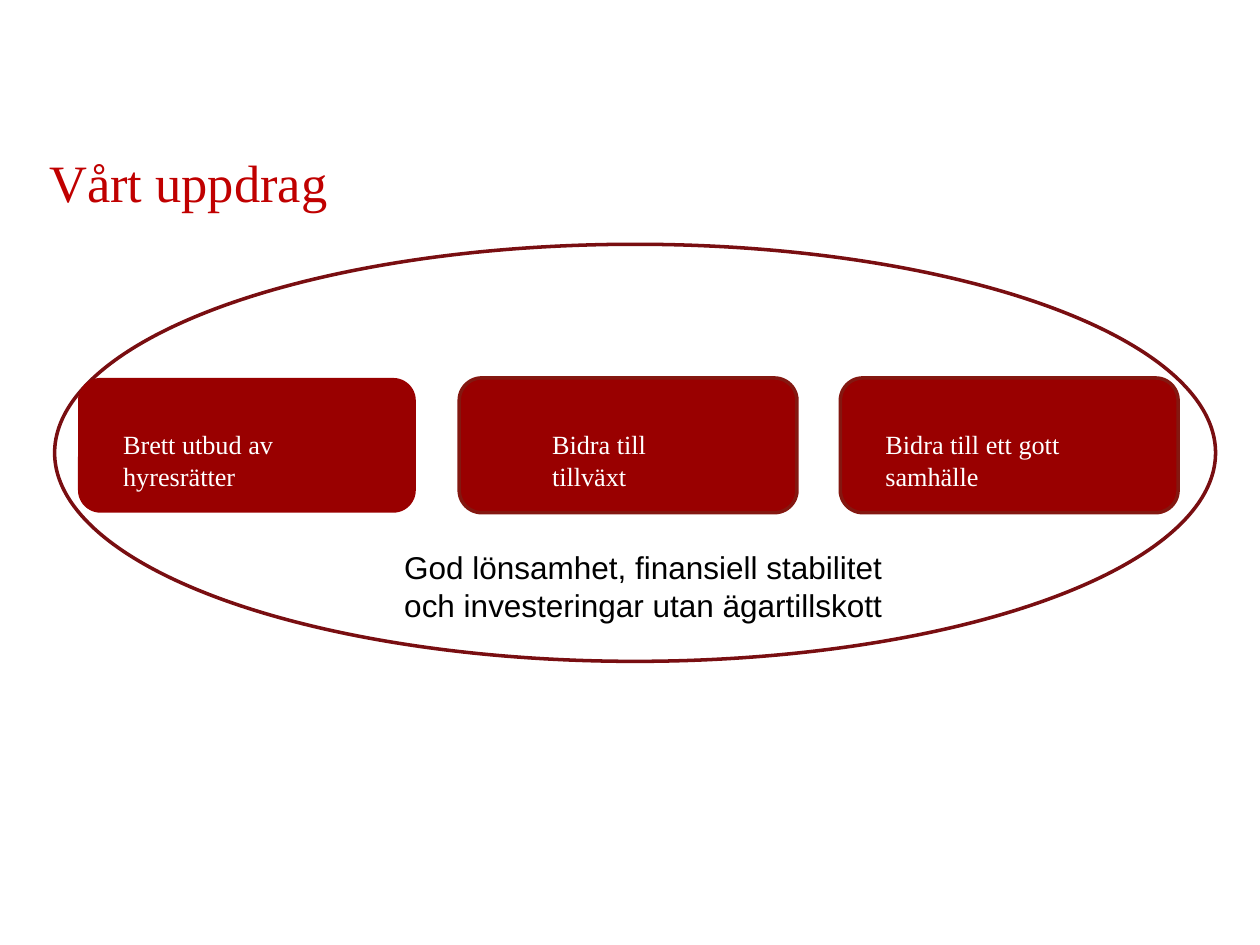
"""Build the mission slide: three goals inside an ellipse above a shared foundation."""
import pptx
import pptx.dml.color
import pptx.enum.shapes
import pptx.enum.text
import pptx.util

Pt = pptx.util.Pt
SHAPES = pptx.enum.shapes.MSO_SHAPE

TITLE = "Vårt uppdrag"
GOALS = [
    {"text": "Brett utbud av hyresrätter", "indent": 18.7, "width": 163.4, "line": None},
    {"text": "Bidra till tillväxt", "indent": 46, "width": 112.3, "line": "841710"},
    {"text": "Bidra till ett gott samhälle", "indent": 18.7, "width": 163.4, "line": "841710"},
]
FOUNDATION = "God lönsamhet, finansiell stabilitet och investeringar utan ägartillskott"
SERIF, SANS = "Times New Roman", "Arial"
GOAL_LEFT, GOAL_TOP, GOAL_WIDTH, GOAL_HEIGHT, GOAL_STEP = 44.6, 216, 193, 77, 217.8
GOAL_TEXT_TOP = 241.2


def color(value):
    return pptx.dml.color.RGBColor.from_string(value)


def add_shape(slide, kind, box, fill, line):
    shape = slide.shapes.add_shape(kind, *map(Pt, box))
    shape.shadow.inherit = False
    shape.fill.solid()
    shape.fill.fore_color.rgb = color(fill)
    if line:
        shape.line.color.rgb = color(line)
        shape.line.width = Pt(2)
    else:
        shape.line.fill.background()


def write_text(shape, box, text, font, size, font_color):
    shape.left, shape.top, shape.width, shape.height = map(Pt, box)
    frame = shape.text_frame
    frame.text = text
    frame.word_wrap = True
    frame.auto_size = pptx.enum.text.MSO_AUTO_SIZE.SHAPE_TO_FIT_TEXT
    frame.vertical_anchor = pptx.enum.text.MSO_ANCHOR.TOP
    paragraph = frame.paragraphs[0]
    paragraph.alignment = pptx.enum.text.PP_ALIGN.LEFT
    paragraph.font.name = font
    paragraph.font.size = Pt(size)
    paragraph.font.color.rgb = color(font_color)


def add_text(slide, box, *style):
    write_text(slide.shapes.add_textbox(*map(Pt, box)), box, *style)


def main():
    presentation = pptx.Presentation()
    presentation.slide_width, presentation.slide_height = Pt(720), Pt(540)
    slide = presentation.slides.add_slide(presentation.slide_layouts[5])
    add_shape(slide, SHAPES.OVAL, (31.2, 139.6, 663.4, 238.3), "FFFFFF", "790E11")
    write_text(slide.shapes.title, (20.9, 82, 297.4, 43.9), TITLE, SERIF, 30, "C00000")
    for index, goal in enumerate(GOALS):
        left = GOAL_LEFT + index * GOAL_STEP
        add_shape(slide, SHAPES.ROUNDED_RECTANGLE,
                  (left, GOAL_TOP, GOAL_WIDTH, GOAL_HEIGHT), "990000", goal["line"])
        add_text(slide, (left + goal["indent"], GOAL_TEXT_TOP, goal["width"], 43.9),
                 goal["text"], SERIF, 15, "FFFFFF")
    add_text(slide, (223.9, 309.6, 308.2, 51.1), FOUNDATION, SANS, 18, "000000")
    presentation.save("out.pptx")


if __name__ == "__main__":
    main()
